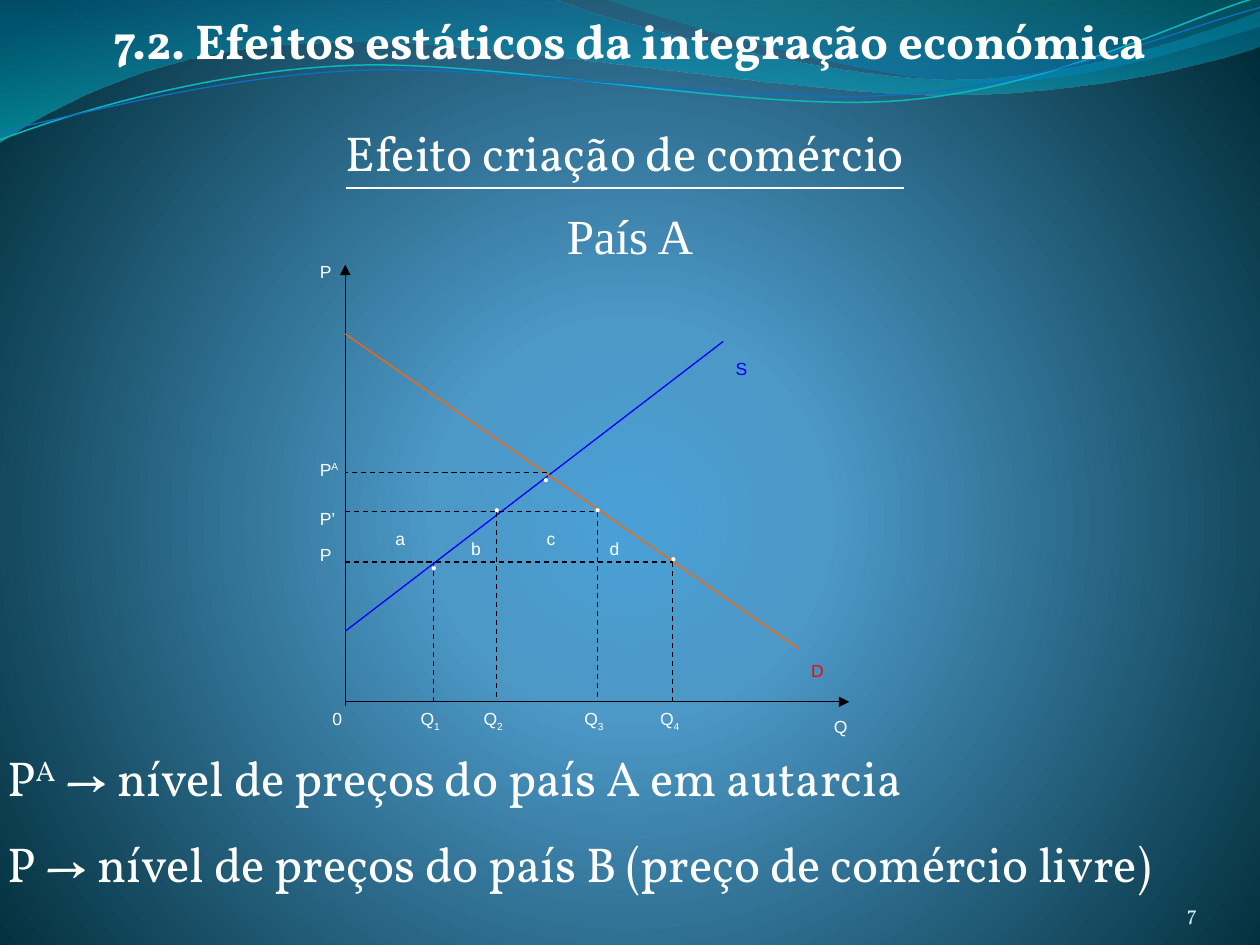
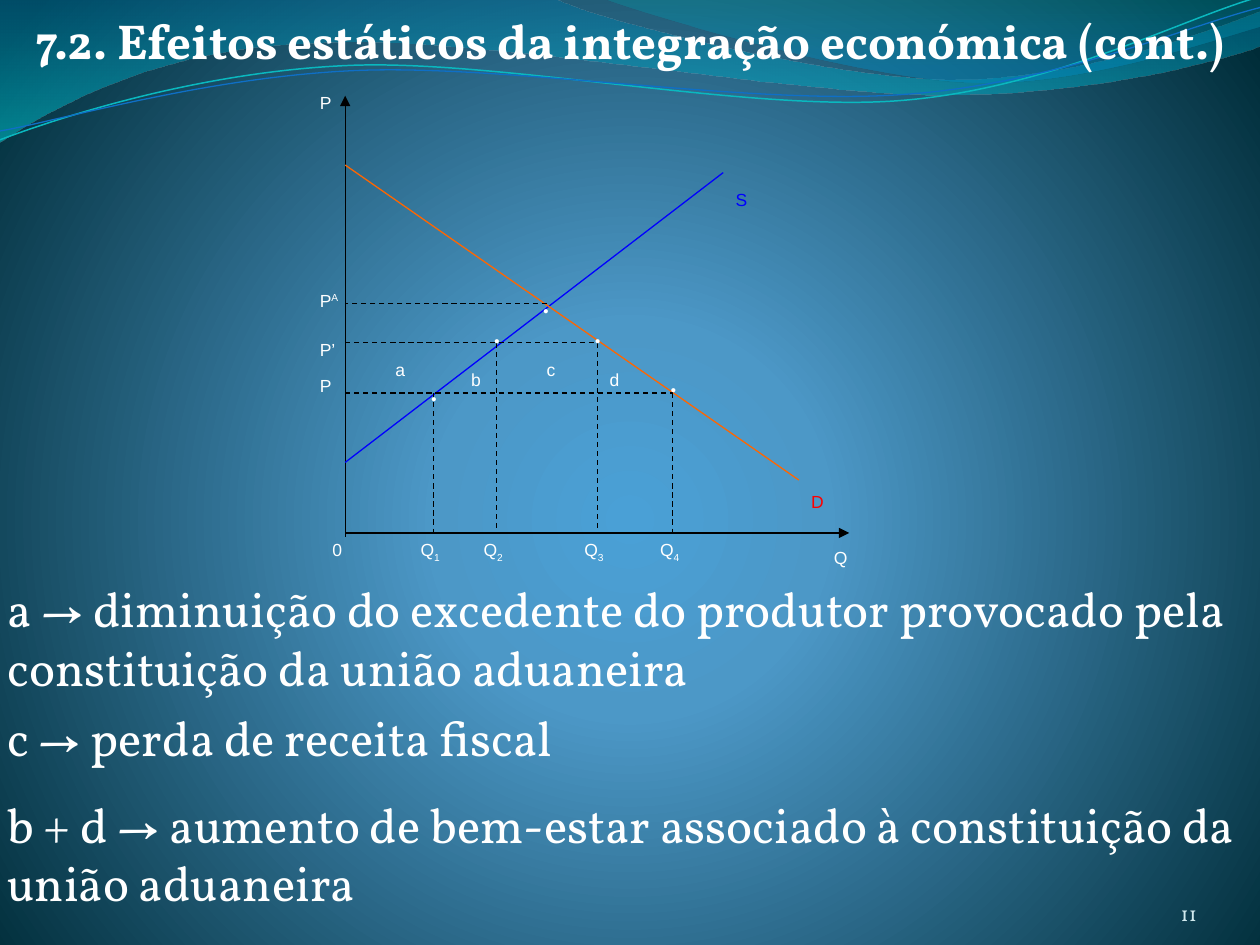
from lxml.etree import SubElement
from pptx import Presentation
from pptx.dml.color import RGBColor
from pptx.enum.dml import MSO_LINE
from pptx.enum.shapes import MSO_CONNECTOR
from pptx.enum.text import MSO_ANCHOR, MSO_AUTO_SIZE, PP_ALIGN
from pptx.oxml import parse_xml
from pptx.oxml.ns import nsdecls, qn
from pptx.util import Inches, Pt

WHITE = RGBColor(0xFF, 0xFF, 0xFF)
BLACK = RGBColor(0x00, 0x00, 0x00)
BLUE = RGBColor(0x00, 0x00, 0xFF)
ORANGE = RGBColor(0xFF, 0x66, 0x00)
RED = RGBColor(0xFF, 0x00, 0x00)
PALE = RGBColor(0xD1, 0xEA, 0xEE)
DEEP = RGBColor(0x00, 0x74, 0xA1)
TEAL = RGBColor(0x00, 0xC6, 0xCF)
GREEN = RGBColor(0x00, 0xA1, 0xA9)
SEA = RGBColor(0x00, 0x8B, 0xBF)
CYAN = RGBColor(0x0A, 0xB8, 0xBF)
ROYAL = RGBColor(0x0F, 0x6F, 0xC6)

SERIF = "Vollkorn"
CENTER = PP_ALIGN.CENTER
MIDDLE = MSO_ANCHOR.MIDDLE


def text(slide, *parts, at, box=None, size=10, font="Arial", color=WHITE,
         bold=False, under=False, align=PP_ALIGN.LEFT, anchor=MSO_ANCHOR.TOP,
         pads=(0.1, 0.05, 0.1, 0.05), base=0):
    spot = [Inches(n) for n in at]
    if box is None:
        box = slide.shapes.add_textbox(*spot)
    box.left, box.top, box.width, box.height = spot
    frame = box.text_frame
    frame.word_wrap = True
    frame.auto_size = MSO_AUTO_SIZE.NONE
    frame.vertical_anchor = anchor
    frame.margin_left, frame.margin_top, frame.margin_right, frame.margin_bottom = [
        Inches(n) for n in pads]
    para = frame.paragraphs[0]
    para.alignment = align
    for part in parts:
        run = para.add_run()
        run.text = part
        run.font.size = Pt(size)
        run.font.name = font
        run.font.color.rgb = color
        run.font.bold = bold
        run.font.underline = under
    if base:
        list(box.element.iter(qn("a:rPr")))[1].set("baseline", str(base * 1000))


deck = Presentation()
deck.slide_width = Inches(10)
deck.slide_height = Inches(7.5)
master = deck.slide_master
layout = deck.slide_layouts[5]

stops = "".join(
    f'<a:gs pos="{pos * 1000}"><a:srgbClr val="{tone}"/></a:gs>'
    for pos, tone in [(0, "4AA0D6"), (25, "4C98C7"), (100, "002C38")])
ground = parse_xml(
    f'<p:bg {nsdecls("p", "a")}><p:bgPr><a:gradFill rotWithShape="1">'
    f'<a:gsLst>{stops}</a:gsLst><a:path path="circle">'
    '<a:fillToRect l="10000" t="110000" r="10000" b="100000"/></a:path>'
    '</a:gradFill><a:effectLst/></p:bgPr></p:bg>')
root = master.element.find(qn("p:cSld"))
for old in root.findall(qn("p:bg")):
    root.remove(old)
root.insert(0, ground)

slides = [deck.slides.add_slide(layout) for _ in range(2)]

bands = [
    ([(0, 0), (4.4, -0.01),
      (4.76, 0.17, 6.64, 0.63, 7.58, 0.63), (8.53, 0.63, 9.58, 0.26, 10, 0.09),
      (10.01, 0.36),
      (9.83, 0.44, 8.7, 0.76, 7.46, 0.75), (6.22, 0.75, 3.82, 0.28, 2.57, 0.34),
      (1.29, 0.36, 0.46, 0.83, -0.01, 1.13), (0, 0)],
     [(DEEP, 0, 45), (TEAL, 1, 55)], None),
    ([(4.79, -0.01),
      (5.09, 0.11, 6.82, 0.62, 7.69, 0.65), (8.56, 0.69, 9.61, 0.32, 10, 0.21),
      (10, 0), (4.79, -0.01)],
     [(GREEN, 0, 30), (SEA, 0.8, 45)], None),
    ([(0, 1.11),
      (0.48, 0.93, 1.58, 0.57, 2.77, 0.52), (3.95, 0.47, 5.93, 0.89, 7.13, 0.8),
      (8.33, 0.71, 9.38, 0.15, 9.98, -0.02)],
     None, (CYAN, 0.85)),
    ([(0, 1.04),
      (0.47, 0.96, 1.64, 0.61, 2.83, 0.56), (4.03, 0.51, 5.97, 0.84, 7.17, 0.75),
      (8.36, 0.67, 9.41, 0.21, 10, 0.06)],
     None, (ROYAL, 0.75)),
]
for rank, (path, blend, edge) in enumerate(bands):
    ends = [(Inches(leg[-2]), Inches(leg[-1])) for leg in path]
    pen = slides[0].shapes.build_freeform(*ends[0])
    pen.add_line_segments(ends[1:], close=blend is not None)
    band = pen.convert_to_shape()
    band.shadow.inherit = False
    for node, leg in zip(list(band.element.iter(qn("a:lnTo"))), path[1:]):
        if len(leg) == 6:
            node.tag = qn("a:cubicBezTo")
            for n in (0, 1):
                x, y = Inches(leg[2 * n]), Inches(leg[2 * n + 1])
                node.insert(n, node.makeelement(qn("a:pt"), {
                    "x": str(x - band.left), "y": str(y - band.top)}))
    if blend:
        band.line.fill.background()
        band.fill.gradient()
        band.fill.gradient_angle = 270
        for stop, (tone, pos, _) in zip(band.fill.gradient_stops, blend):
            stop.color.rgb = tone
            stop.position = pos
        for node, (_, _, alpha) in zip(band.element.iter(qn("a:srgbClr")), blend):
            SubElement(node, qn("a:alpha")).set("val", str(alpha * 1000))
    else:
        band.fill.background()
        band.line.color.rgb, band.line.width = edge[0], Pt(edge[1])
    next(band.element.iter(qn("p:cNvPr"))).set("id", str(100 + rank))
    master.shapes.element.insert(2 + rank, band.element)

TITLE = "7.2. Efeitos estáticos da integração económica"
pages = [
    (TITLE, "7", 5.57, [
        (5.88, 0.57, ("P", "A", " → nível de preços do país A em autarcia"), 30),
        (6.56, 0.57, ("P → nível de preços do país B (preço de comércio livre)",), 0)]),
    (TITLE + " (cont.)", "11", 4.23, [
        (4.54, 1.04, ("a → diminuição do excedente do produtor provocado pela "
                      "constituição da união aduaneira",), 0),
        (5.56, 0.57, ("c → perda de receita fiscal",), 0),
        (6.25, 1.04, ("b + d → aumento de bem-estar associado à constituição da "
                      "união aduaneira",), 0)]),
]

LEFT = 2.74
AUT, TAX, FREE = -1.82, -1.51, -1.11
Q1, Q2, Q3, Q4 = 3.44, 3.94, 4.74, 5.34
lines = [
    (LEFT, 0.03, LEFT, -3.47, BLACK, "arrow"),
    (LEFT, 0, 6.74, 0, BLACK, "arrow"),
    (LEFT, -0.56, 5.74, -2.86, BLUE, ""),
    (LEFT, -2.92, 6.34, -0.42, ORANGE, ""),
    (4.34, AUT, LEFT, AUT, BLACK, "dash"),
    (LEFT, FREE, Q4, FREE, BLACK, "dash"),
    (LEFT, TAX, Q3, TAX, BLACK, "dash"),
]
lines += [(x, y, x, 0, BLACK, "dash")
          for x, y in [(Q4, FREE), (Q3, TAX), (Q2, TAX), (Q1, FREE)]]
points = [(5.14, -1.27), (4.13, -1.9), (4.54, -1.66), (3.74, -1.66), (3.24, -1.2)]
labels = [
    (6.34, -0.38, ("D",), RED, 0), (5.74, -2.78, ("S",), BLUE, 0),
    (6.52, 0.06, ("Q",), WHITE, 0), (2.54, 0, ("0",), WHITE, 0),
    (2.44, -1.3, ("P",), WHITE, 0), (2.44, -1.59, ("P’",), WHITE, 0),
    (2.44, -1.98, ("P", "A"), WHITE, 30), (2.44, -3.55, ("P",), WHITE, 0),
    (3.04, -1.43, ("a",), WHITE, 0), (3.64, -1.35, ("b",), WHITE, 0),
    (4.24, -1.43, ("c",), WHITE, 0), (4.74, -1.35, ("d",), WHITE, 0),
]
labels += [(x - 0.2, 0, ("Q", str(n)), WHITE, -30)
           for n, x in enumerate([Q1, Q2, Q3, Q4], 1)]

for slide, (title, number, floor, notes) in zip(slides, pages):
    text(slide, title, at=(0, 0.03, 10, 0.57), box=slide.shapes.title, size=28,
         font=SERIF, bold=True, align=CENTER)
    text(slide, number, at=(8.67, 6.95, 0.83, 0.4), size=12, font=SERIF, color=PALE,
         align=PP_ALIGN.RIGHT, anchor=MSO_ANCHOR.BOTTOM, pads=(0, 0, 0, 0))
    for x1, y1, x2, y2, color, kind in lines:
        line = slide.shapes.add_connector(
            MSO_CONNECTOR.STRAIGHT, Inches(x1), Inches(floor + y1),
            Inches(x2), Inches(floor + y2))
        line.line.color.rgb = color
        line.line.width = Pt(0.75)
        if kind == "dash":
            line.line.dash_style = MSO_LINE.DASH
        props = line.element.spPr
        if kind == "arrow":
            SubElement(props.find(qn("a:ln")), qn("a:tailEnd")).set("type", "triangle")
        SubElement(props, qn("a:effectLst"))
    for x, y in points:
        text(slide, "•", at=(x, floor + y, 1, 0.4), font="Times New Roman",
             pads=(0.18, 0.05, 0.1, 0.05))
    for x, y, parts, color, base in labels:
        text(slide, *parts, at=(x, floor + y, 1, 0.4), color=color, base=base)
    for top, tall, parts, base in notes:
        text(slide, *parts, at=(-0.04, top, 10, tall), size=28, font=SERIF,
             anchor=MIDDLE, base=base)

text(slides[0], "Efeito criação de comércio", at=(-0.04, 0.92, 10, 0.57), size=28,
     font=SERIF, under=True, align=CENTER, anchor=MIDDLE)
text(slides[0], "País A", at=(0, 1.55, 10, 0.86), size=28, font="Times New Roman",
     align=CENTER, pads=(0.1, 0.08, 0.1, 0))

deck.save("out.pptx")
